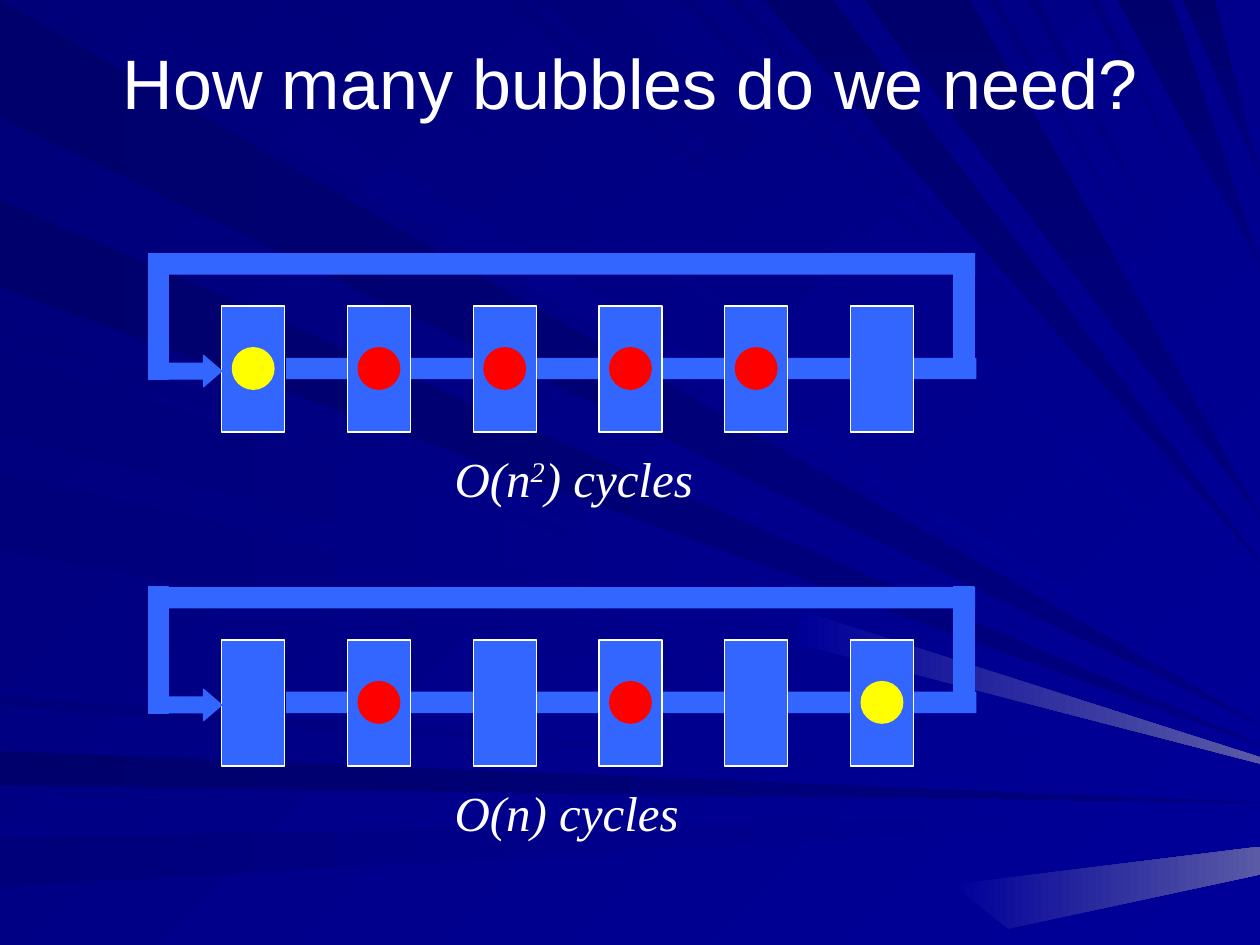
"""Builds the slide comparing bubble counts in two looped pipelines."""
import pptx
import pptx.dml.color
import pptx.enum.shapes
import pptx.enum.text
import pptx.util
from pptx.util import Inches

theme = {
    "back": ("000078", "000099"),
    "shadow": ("00006D", "000080"),
    "beam": ("00007B", "000099"),
    "glow": ("000099", "5A5AA6"),
    "pipe": "3366FF",
    "text": "FFFFFF",
    "red": "FF0000",
    "yellow": "FFFF00",
    "title_font": "Arial",
    "label_font": "Times New Roman",
    "title_size": 40,
    "label_size": 28,
    "line_width": 0.75,
}

left_rays = {
    "shadow": [(0, 0.93), (1.59, 2.28), (5.96, 6.23)],
    "beam": [(2.58, 2.7), (2.8, 3.45), (3.74, 4.37), (5.52, 5.6), (6.65, 7.04)],
}
top_rays = {
    "beam": [(0.26, 1, 5.63), (2.25, 2.47, 5.5), (3.98, 4.16, 5.18), (4.26, 4.92, 4.93),
             (5.4, 5.52, 4.63), (5.77, 5.88, 4.54), (7.85, 7.92, 3.57), (8.15, 8.24, 3.35),
             (8.65, 8.72, 2.53)],
    "shadow": [(6.06, 6.61, 4.46), (6.86, 7.7, 4.1), (8.87, 9.3, 2.1), (9.39, 9.64, 1.4)],
}
glow_rays = [
    [(6.37, 4.85), (10, 6.01), (10, 6.06), (6.33, 5.11)],
    [(7.56, 7.02), (10, 6.72), (10, 6.94), (8, 7.37)],
]
slide_width, slide_height = 10, 7.5
rays = []
for tone, spans in left_rays.items():
    for upper, lower in spans:
        tip = 5.7 + 0.11 * (upper + lower) / 2
        rays.append((tone, 0, [(0, upper), (0, lower), (slide_width, tip)]))
for tone, spans in top_rays.items():
    angle = 90 if tone == "shadow" else 45
    for start, end, tip in spans:
        rays.append((tone, angle, [(start, 0), (end, 0), (slide_width, tip)]))
rays += [("glow", 0, corners) for corners in glow_rays]

pipelines = [
    (2.01, ["yellow", "red", "red", "red", "red", None],
     [("O(n", None), ("2", "30000"), (") cycles", None)]),
    (4.66, [None, "red", None, "red", None, "yellow"], [("O(n) cycles", None)]),
]
first_stage, last_stage = 1.76, 6.75
stage_width, bubble_size = 0.5, 0.33
kinds = pptx.enum.shapes.MSO_SHAPE
rgb = pptx.dml.color.RGBColor.from_string


def shade(fill, colours, angle):
    fill.gradient()
    fill.gradient_angle = 360 - angle
    for stop, colour in zip(fill.gradient_stops, colours):
        stop.color.rgb = rgb(colour)


def add_part(kind, left, top, width, height, colour, outline=None):
    part = slide.shapes.add_shape(kind, Inches(left), Inches(top), Inches(width), Inches(height))
    part.shadow.inherit = False
    part.fill.solid()
    part.fill.fore_color.rgb = rgb(colour)
    if outline:
        part.line.color.rgb = rgb(outline)
        part.line.width = pptx.util.Pt(theme["line_width"])
    else:
        part.line.fill.background()
    return part


deck = pptx.Presentation()
deck.slide_width, deck.slide_height = Inches(slide_width), Inches(slide_height)
slide = deck.slides.add_slide(deck.slide_layouts[5])
shade(slide.background.fill, theme["back"], 45)

for tone, angle, corners in rays:
    points = [(Inches(x), Inches(y)) for x, y in corners]
    edge = slide.shapes.build_freeform(*points[0])
    edge.add_line_segments(points[1:], close=True)
    ray = edge.convert_to_shape()
    ray.shadow.inherit = False
    ray.line.fill.background()
    shade(ray.fill, theme[tone], angle)

heading = slide.shapes.title
heading.element.getparent().append(heading.element)
heading.left, heading.top = Inches(0.5), Inches(0.02)
heading.width, heading.height = Inches(9), Inches(1.25)
heading.text_frame.vertical_anchor = pptx.enum.text.MSO_ANCHOR.MIDDLE
question = heading.text_frame.paragraphs[0]
question.alignment = pptx.enum.text.PP_ALIGN.CENTER
words = question.add_run()
words.text = "How many bubbles do we need?"
words.font.name = theme["title_font"]
words.font.size = pptx.util.Pt(theme["title_size"])
words.font.color.rgb = rgb(theme["text"])

pipe = theme["pipe"]
for top, bubbles, label in pipelines:
    add_part(kinds.RECTANGLE, 2.27, top + 0.83, 5.48, 0.17, pipe)
    pitch = (last_stage - first_stage) / (len(bubbles) - 1)
    stages = [first_stage + i * pitch for i in range(len(bubbles))]
    for left in stages:
        add_part(kinds.RECTANGLE, left, top + 0.42, stage_width, 1, pipe, theme["text"])
    add_part(kinds.RECTANGLE, 1.18, top, 6.56, 0.17, pipe)
    entry = add_part(kinds.RIGHT_ARROW, 1.18, top + 0.81, 0.58, 0.25, pipe, pipe)
    entry.adjustments[1] = 0.58
    add_part(kinds.RECTANGLE, 1.18, top, 0.16, 1, pipe, pipe)
    add_part(kinds.RECTANGLE, 7.57, top, 0.16, 0.91, pipe, pipe)
    for left, colour in zip(stages, bubbles):
        if colour:
            inset = (stage_width - bubble_size) / 2
            add_part(kinds.OVAL, left + inset, top + 0.75, bubble_size, bubble_size,
                     theme[colour], theme[colour])

    cost = slide.shapes.add_textbox(Inches(3.51), Inches(top + 1.5), Inches(2.1), Inches(0.57))
    cost.text_frame.word_wrap = False
    cost.text_frame.auto_size = pptx.enum.text.MSO_AUTO_SIZE.SHAPE_TO_FIT_TEXT
    for text, baseline in label:
        term = cost.text_frame.paragraphs[0].add_run()
        term.text = text
        term.font.name = theme["label_font"]
        term.font.size = pptx.util.Pt(theme["label_size"])
        term.font.italic = True
        term.font.color.rgb = rgb(theme["text"])
        if baseline:
            term._r.get_or_add_rPr().set("baseline", baseline)

deck.save("out.pptx")
